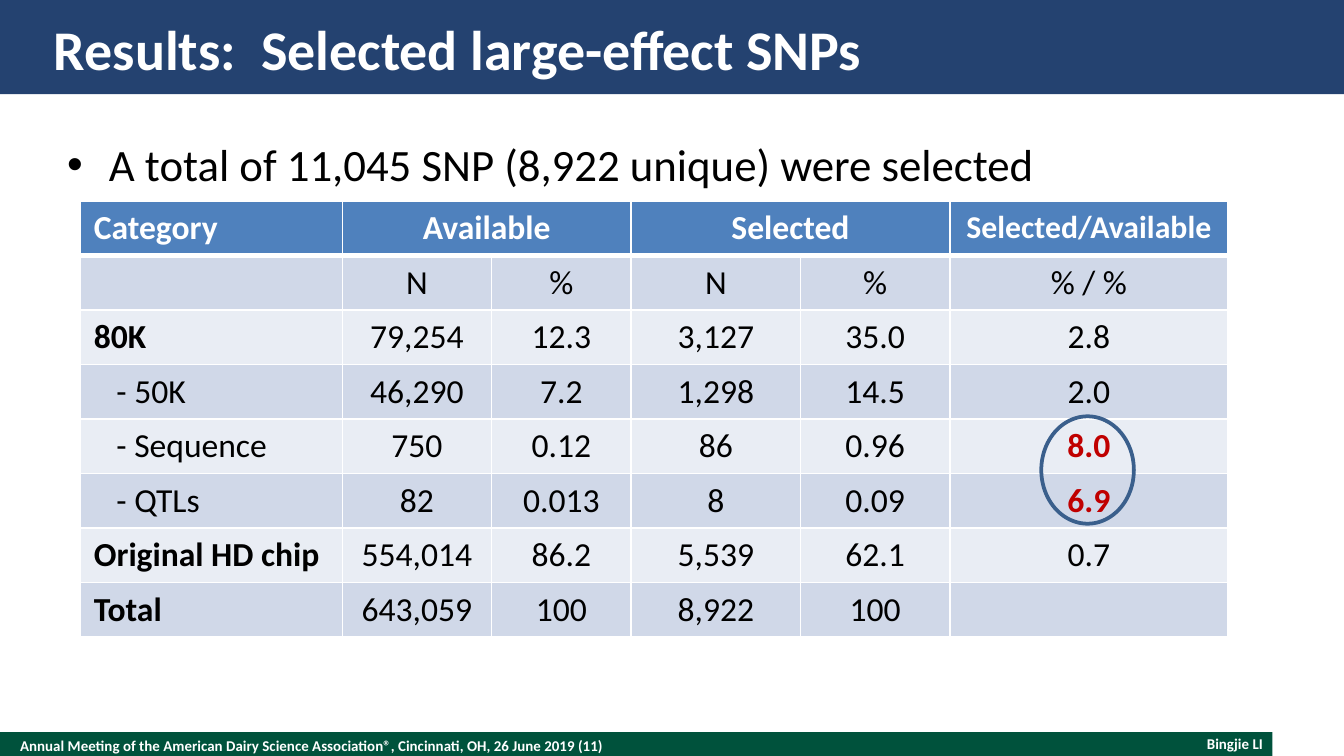
import pptx
import pptx.util
import pptx.dml.color
import pptx.enum.shapes
import pptx.enum.text
from lxml import etree
from pptx.oxml.ns import qn

Cm = pptx.util.Cm
Pt = pptx.util.Pt
Align = pptx.enum.text.PP_ALIGN
Mid = pptx.enum.text.MSO_ANCHOR.MIDDLE
Kind = pptx.enum.shapes.MSO_SHAPE

FONT = "Calibri"
COLORS = {
    "navy": "244270", "green": "00523C", "head": "4F81BD",
    "dark": "D0D8E8", "light": "E9EDF4", "ring": "3A5F8C",
    "red": "C00000", "black": "000000", "white": "FFFFFF",
}
COLS = [4.95, 2.82, 2.64, 3.2, 2.82, 5.26]
ROWS = [
    ["Category", "Available", "", "Selected", "", "Selected/Available"],
    ["", "N", "%", "N", "%", "% / %"],
    ["80K", "79,254", "12.3", "3,127", "35.0", "2.8"],
    ["- 50K", "46,290", "7.2", "1,298", "14.5", "2.0"],
    ["- Sequence", "750", "0.12", "86", "0.96", "8.0"],
    ["- QTLs", "82", "0.013", "8", "0.09", "6.9"],
    ["Original HD chip", "554,014", "86.2", "5,539", "62.1", "0.7"],
    ["Total", "643,059", "100", "8,922", "100", ""],
]
KEY = {"8.0", "6.9"}


def rgb(name):
    return pptx.dml.color.RGBColor.from_string(COLORS[name])


def write(frame, text, size, color, bold=False, align=Align.LEFT):
    """Add one run to the first paragraph of a text frame."""
    para = frame.paragraphs[0]
    para.alignment = align
    run = para.add_run()
    run.text = text
    font = run.font
    font.name, font.size, font.bold = FONT, Pt(size), bold
    font.color.rgb = rgb(color)


def clear(frame):
    """Centre the text upright, with wrapping and no insets."""
    frame.word_wrap = True
    frame.auto_size = pptx.enum.text.MSO_AUTO_SIZE.NONE
    frame.vertical_anchor = Mid
    frame.margin_left = frame.margin_right = 0
    frame.margin_top = frame.margin_bottom = 0


def band(slide, x, y, w, h, color):
    bar = slide.shapes.add_shape(Kind.RECTANGLE, Cm(x), Cm(y), Cm(w), Cm(h))
    bar.shadow.inherit = False
    bar.fill.solid()
    bar.fill.fore_color.rgb = rgb(color)
    bar.line.fill.background()


def header(slide, x, y, w, h):
    band(slide, x, y, w, h, "navy")
    title = slide.shapes.title
    title.element.getparent().append(title.element)  # in front of the band
    title.left, title.top = Cm(x + 1.02), Cm(y + 0.25)
    title.width, title.height = Cm(w - 2.04), Cm(1.32)
    clear(title.text_frame)
    write(title.text_frame, "Results:  Selected large-effect SNPs", 30, "white", True)


def footer(slide, x, y, w, h):
    band(slide, x, y, w, h, "green")
    notes = [
        (0.38, 0, 16.5, h, Align.LEFT, "Annual Meeting of the American Dairy Science "
         "Association®, Cincinnati, OH, 26 June 2019 (11)"),
        (w - 5.77, 0.05, 5.59, 0.33, Align.RIGHT, "Bingjie LI"),
    ]
    for dx, dy, wide, high, align, text in notes:
        box = slide.shapes.add_textbox(Cm(x + dx), Cm(y + dy), Cm(wide), Cm(high))
        clear(box.text_frame)
        write(box.text_frame, text, 8, "white", True, align)


def point(slide, x, y, w, h):
    frame = slide.shapes.add_textbox(Cm(x), Cm(y), Cm(w), Cm(h)).text_frame
    frame.word_wrap = True
    props = frame.paragraphs[0]._p.get_or_add_pPr()
    props.set("marL", str(Cm(0.79)))
    props.set("indent", str(Cm(-0.79)))
    etree.SubElement(props, qn("a:buFont"), typeface="Arial")
    etree.SubElement(props, qn("a:buChar"), char="•")
    write(frame, "A total of 11,045 SNP (8,922 unique) were selected", 24, "black")


def edge(cell, top, low):
    """Draw white cell borders; top and low are widths in points."""
    props = cell._tc.get_or_add_tcPr()
    sides = [("L", 1), ("R", 1), ("T", top), ("B", low)]
    for spot, (side, width) in enumerate(sides):
        line = etree.Element(qn(f"a:ln{side}"), w=str(Pt(width)))
        fill = etree.SubElement(line, qn("a:solidFill"))
        etree.SubElement(fill, qn("a:srgbClr"), val=COLORS["white"])
        props.insert(spot, line)


def grid(slide, x, y, w, h):
    table = slide.shapes.add_table(len(ROWS), len(COLS), Cm(x), Cm(y), Cm(w), Cm(h)).table
    table.first_row = table.horz_banding = False
    for col, wide in zip(table.columns, COLS):
        col.width = Cm(wide)
    for r, row in enumerate(ROWS):
        table.rows[r].height = Cm(h / len(ROWS))
        for c, text in enumerate(row):
            cell = table.cell(r, c)
            cell.fill.solid()
            cell.fill.fore_color.rgb = rgb("head" if r == 0 else "dark" if r % 2 else "light")
            edge(cell, 3 if r == 1 else 1, 3 if r == 0 else 1)
            sub = text.startswith("- ")
            if sub:
                cell.margin_left = Cm(0.68)
            if not text:
                cell.text_frame.paragraphs[0].font.size = Pt(18)
                continue
            color = "white" if r == 0 else "red" if text in KEY else "black"
            bold = r == 0 or text in KEY or (c == 0 and not sub)
            size = 17 if r == 0 and c == len(COLS) - 1 else 18
            write(cell.text_frame, text, size, color, bold, Align.CENTER if c else Align.LEFT)
    for c in (1, 3):
        table.cell(0, c).merge(table.cell(0, c + 1))


def ring(slide, x, y, w, h):
    oval = slide.shapes.add_shape(Kind.OVAL, Cm(x), Cm(y), Cm(w), Cm(h))
    oval.shadow.inherit = False
    oval.fill.background()
    oval.line.color.rgb = rgb("ring")
    oval.line.width = Pt(2)


def main():
    deck = pptx.Presentation()
    deck.slide_width, deck.slide_height = Cm(25.4), Cm(14.29)
    slide = deck.slides.add_slide(deck.slide_layouts.get_by_name("Title Only"))
    footer(slide, 0, 13.84, 24.05, 0.5)
    header(slide, 0, 0, 25.4, 1.78)
    grid(slide, 1.52, 3.8, sum(COLS), 8.23)
    point(slide, 1.02, 2.46, 22.2, 1.28)
    ring(slide, 19.68, 7.87, 1.75, 2.03)
    deck.save("out.pptx")


if __name__ == "__main__":
    main()
